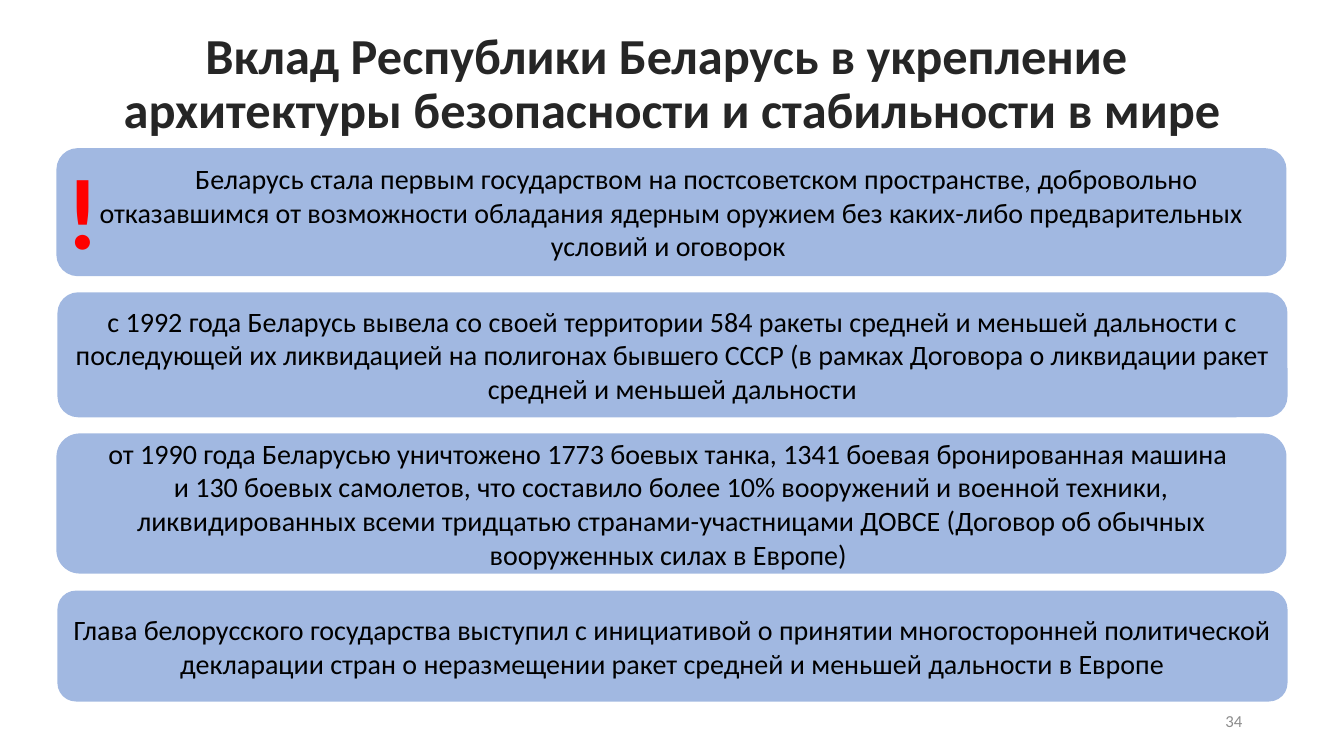
from lxml import etree
from pptx import Presentation
from pptx.dml.color import RGBColor
from pptx.enum.shapes import MSO_SHAPE
from pptx.enum.text import MSO_ANCHOR, PP_ALIGN
from pptx.oxml.ns import qn
from pptx.util import Inches, Pt

ROUNDED = MSO_SHAPE.ROUNDED_RECTANGLE
TOP, MIDDLE = MSO_ANCHOR.TOP, MSO_ANCHOR.MIDDLE
LEFT, CENTER, RIGHT = PP_ALIGN.LEFT, PP_ALIGN.CENTER, PP_ALIGN.RIGHT
FONT = "Calibri"
COLORS = {"title": "262626", "panel": "4472C4", "body": "000000",
          "alert": "FF0000", "number": "8C8C8C"}
TITLE = ("Вклад Республики Беларусь в укрепление \n"
         "архитектуры безопасности и стабильности в мире")
PANELS = [
    (0.56, 1.47, 1.27,
     "\tБеларусь стала первым государством на постсоветском пространстве, "
     "добровольно отказавшимся от возможности обладания ядерным оружием "
     "без каких-либо предварительных условий и оговорок "),
    (0.57, 2.9, 1.24,
     "с 1992 года Беларусь вывела со своей территории 584 ракеты средней и "
     "меньшей дальности с последующей их ликвидацией на полигонах бывшего "
     "СССР (в рамках Договора о ликвидации ракет средней и меньшей дальности"),
    (0.56, 4.3, 1.39,
     "от 1990 года Беларусью уничтожено 1773 боевых танка, "
     "1341 боевая бронированная машина \n"
     "и 130 боевых самолетов, что составило более 10% вооружений и военной "
     "техники, ликвидированных всеми тридцатью странами-участницами ДОВСЕ "
     "(Договор об обычных вооруженных силах в Европе) "),
    (0.57, 5.86, 1.1,
     "Глава белорусского государства выступил с инициативой о принятии "
     "многосторонней политической декларации стран о неразмещении ракет "
     "средней и меньшей дальности в Европе"),
]


def write_text(shape, text, color, size, align=CENTER, anchor=MIDDLE,
               bold=False, spacing=1.0):
    """Fill a shape with one formatted paragraph."""
    frame = shape.text_frame
    frame.word_wrap = True
    frame.vertical_anchor = anchor
    paragraph = frame.paragraphs[0]
    paragraph.text = text
    paragraph.alignment = align
    paragraph.line_spacing = spacing
    formats = {"name": FONT, "size": Pt(size), "bold": bold}
    for run in paragraph.runs:
        for name, value in formats.items():
            setattr(run.font, name, value)
        run.font.color.rgb = RGBColor.from_string(COLORS[color])


def add_label(slide, box, text, color, size, **formats):
    """Add a text box at left, top, width, height in inches."""
    shape = slide.shapes.add_textbox(*map(Inches, box))
    write_text(shape, text, color, size, **formats)


def add_panel(slide, left, top, height, text):
    """Add a half-transparent rounded panel with a statement."""
    shape = slide.shapes.add_shape(
        ROUNDED, Inches(left), Inches(top), Inches(12.2), Inches(height))
    shape.shadow.inherit = False
    shape.line.fill.background()
    shape.fill.solid()
    shape.fill.fore_color.rgb = RGBColor.from_string(COLORS["panel"])
    color = shape.fill._xPr.find(qn("a:solidFill"))[0]
    etree.SubElement(color, qn("a:alpha"), val="50000")
    write_text(shape, text, "body", 20)


def main():
    """Build and save the slide."""
    presentation = Presentation()
    presentation.slide_width = Inches(13.33)
    presentation.slide_height = Inches(7.5)
    slide = presentation.slides.add_slide(presentation.slide_layouts[6])
    add_label(slide, (0.92, 0.4, 11.5, 0.89), TITLE, "title", 36,
              bold=True, spacing=0.9)
    for panel in PANELS:
        add_panel(slide, *panel)
    add_label(slide, (0.56, 1.43, 0.54, 1.31), "!", "alert", 72,
              align=LEFT, anchor=TOP, bold=True)
    add_label(slide, (9.42, 6.95, 3, 0.4), "34", "number", 12, align=RIGHT)
    presentation.save("out.pptx")


if __name__ == "__main__":
    main()
